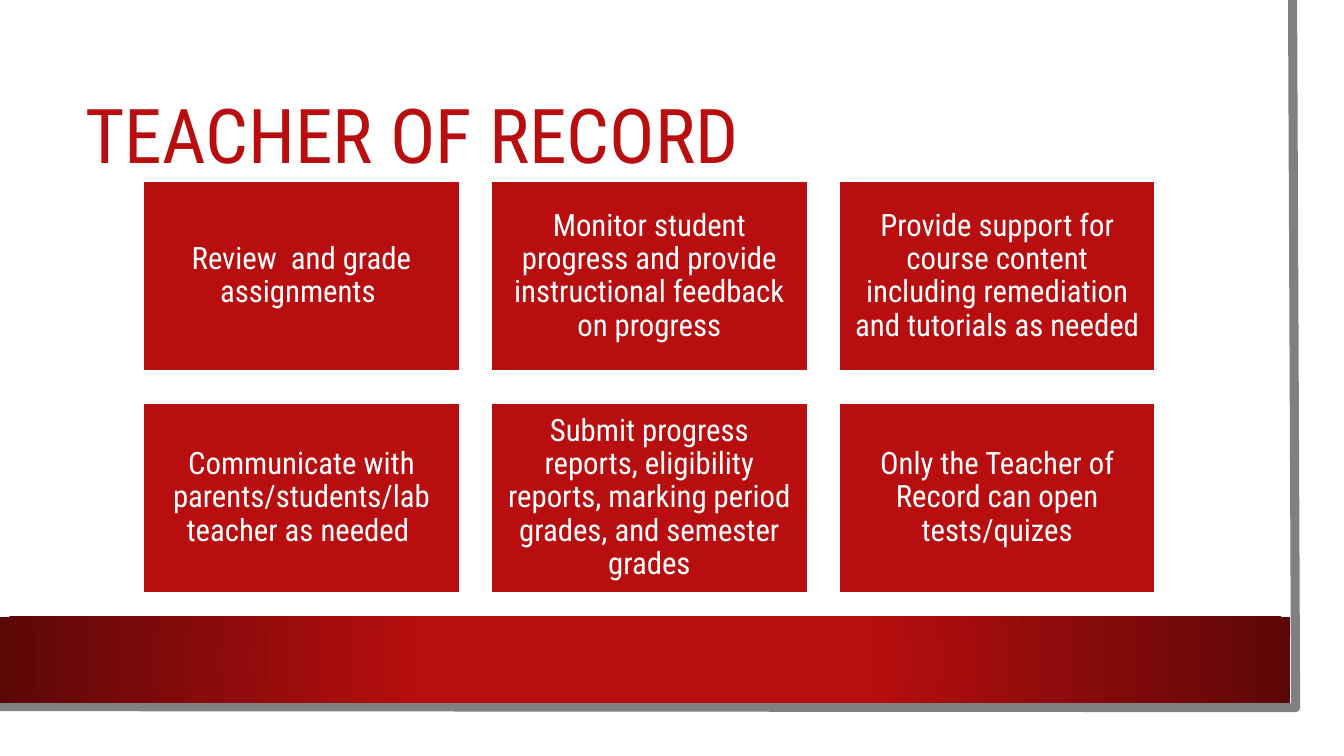
from dataclasses import dataclass
from typing import NamedTuple

from lxml.etree import SubElement
from pptx import Presentation
from pptx.dml.color import RGBColor as Rgb
from pptx.enum.shapes import MSO_SHAPE as Kind
from pptx.enum.text import MSO_ANCHOR as Anchor, PP_ALIGN as Align
from pptx.oxml.ns import qn
from pptx.shapes.autoshape import Shape
from pptx.slide import Slide
from pptx.util import Pt

PX = 9144  # EMU in one px, at 100 px to the inch


@dataclass(frozen=True)
class Theme:
    red: Rgb = Rgb(0xB8, 0x0E, 0x0F)
    dark: Rgb = Rgb(0x5C, 0x07, 0x07)
    gray: Rgb = Rgb(0x80, 0x80, 0x80)
    white: Rgb = Rgb(0xFF, 0xFF, 0xFF)
    font: str = "Roboto Condensed"
    title: int = 54
    body: int = 22
    edge: float = 6.5
    rim: float = 1.5


class Box(NamedTuple):
    left: int
    top: int
    width: int
    height: int

    def emu(self) -> list[int]:
        return [n * PX for n in self]


@dataclass(frozen=True)
class Card:
    text: str
    box: Box


THEME = Theme()
PAPER = Box(0, 0, 1310, 727)
BAND = Box(0, 612, 1280, 85)
TITLE = Box(75, 75, 1137, 126)
FIRST = Box(142, 180, 314, 188)
STEP_X, STEP_Y, COLS = 345, 220, 3
PAD = 9
EDGE = [(1282, 0), (1285, 702), (-3, 701)]
DUTIES = [
    "Review  and grade assignments ",
    "Monitor student progress and provide instructional feedback on progress",
    "Provide support for course content including remediation and tutorials as needed",
    "Communicate with parents/students/lab teacher as needed ",
    "Submit progress reports, eligibility reports, marking period grades, and semester grades",
    "Only the Teacher of Record can open tests/quizes",
]


def add_rect(slide: Slide, box: Box, fill: Rgb) -> Shape:
    rect = slide.shapes.add_shape(Kind.RECTANGLE, *box.emu())
    rect.shadow.inherit = False
    rect.fill.solid()
    rect.fill.fore_color.rgb = fill
    rect.line.fill.background()
    return rect


def set_text(shape: Shape, text: str, size: int, color: Rgb, align: Align) -> None:
    frame = shape.text_frame
    frame.word_wrap = True
    frame.vertical_anchor = Anchor.MIDDLE
    para = frame.paragraphs[0]
    para.text = text
    para.alignment = align
    para.line_spacing = 0.9
    para.font.name = THEME.font
    para.font.size = Pt(size)
    para.font.color.rgb = color


def add_edge(slide: Slide) -> None:
    pen = slide.shapes.build_freeform(*EDGE[0], scale=PX)
    pen.add_line_segments(EDGE[1:], close=False)
    edge = pen.convert_to_shape()
    edge.shadow.inherit = False
    edge.fill.background()
    edge.line.color.rgb = THEME.gray
    edge.line.width = Pt(THEME.edge)


def add_band(slide: Slide) -> None:
    band = add_rect(slide, BAND, THEME.red)
    band.fill.gradient()
    stops = zip(band.fill.gradient_stops, (0.34, 1), (THEME.red, THEME.dark))
    for stop, place, color in stops:
        stop.position = place
        stop.color.rgb = color
    # Radial gradient from the centre
    grad = band.element.spPr.find(qn("a:gradFill"))
    grad.remove(grad.find(qn("a:lin")))
    ring = SubElement(grad, qn("a:path"), {"path": "circle"})
    SubElement(ring, qn("a:fillToRect"), dict.fromkeys("ltrb", "50000"))


def add_card(slide: Slide, card: Card) -> None:
    rect = add_rect(slide, card.box, THEME.red)
    rect.line.color.rgb = THEME.white
    rect.line.width = Pt(THEME.rim)
    frame = rect.text_frame
    frame.margin_left = frame.margin_right = PAD * PX
    frame.margin_top = frame.margin_bottom = PAD * PX
    set_text(rect, card.text, THEME.body, THEME.white, Align.CENTER)


def lay_out(duties: list[str]) -> list[Card]:
    cards = []
    for i, text in enumerate(duties):
        row, col = divmod(i, COLS)
        left, top = FIRST.left + col * STEP_X, FIRST.top + row * STEP_Y
        cards.append(Card(text, FIRST._replace(left=left, top=top)))
    return cards


def main() -> None:
    deck = Presentation()
    deck.slide_width, deck.slide_height = 1333 * PX, 750 * PX
    slide = deck.slides.add_slide(deck.slide_layouts[6])

    # Backdrop
    add_rect(slide, PAPER, THEME.white)
    add_edge(slide)
    add_band(slide)

    # Title
    title = slide.shapes.add_textbox(*TITLE.emu())
    set_text(title, "TEACHER OF RECORD", THEME.title, THEME.red, Align.LEFT)

    # Duties
    for card in lay_out(DUTIES):
        add_card(slide, card)

    deck.save("out.pptx")


if __name__ == "__main__":
    main()
